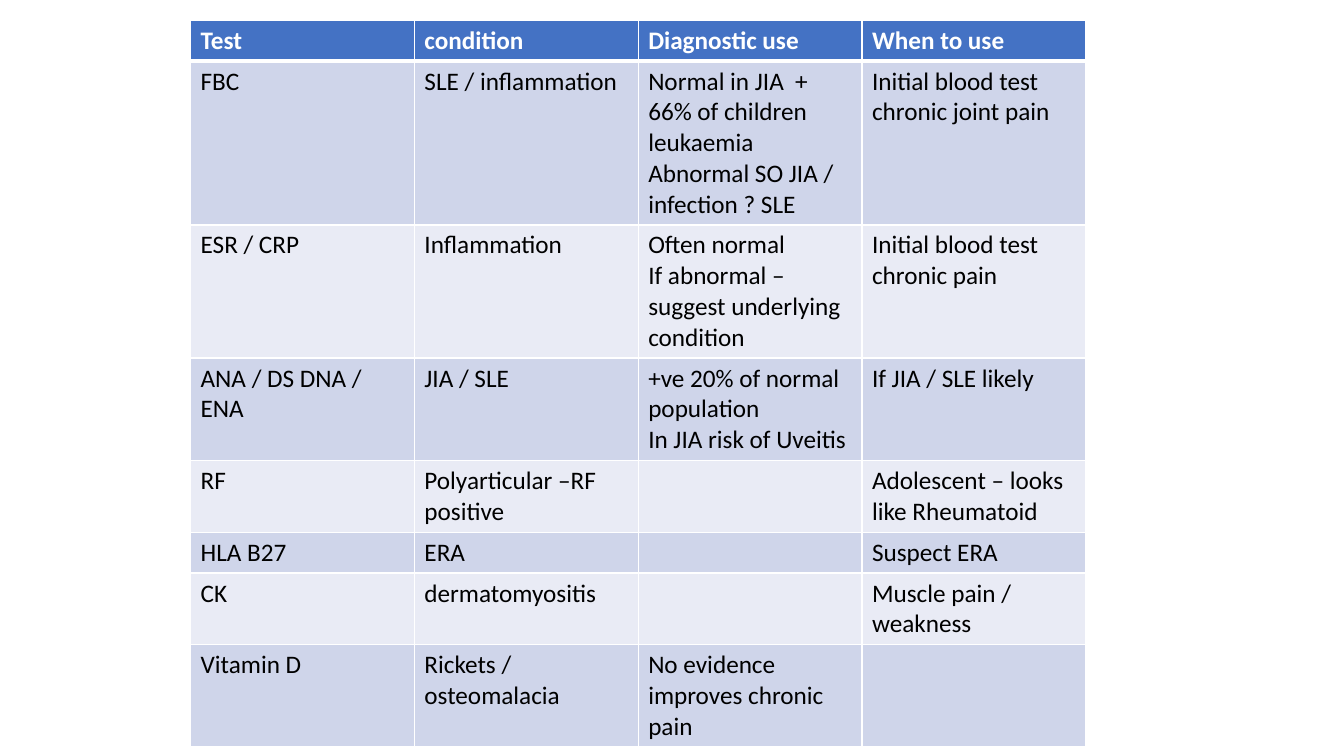
from lxml.etree import SubElement
from pptx import Presentation
from pptx.dml.color import RGBColor
from pptx.oxml.ns import qn
from pptx.util import Inches, Pt

HEADER_FILL, BAND_FILLS = "4472C4", ("CFD5EA", "E9EBF5")
WHITE, BLACK = "FFFFFF", "000000"
COLUMN_WIDTH = 2.22
LINE_HEIGHT, CELL_PADDING = 0.305, 0.1

# Each row: number of text lines in its tallest cell, then the cell texts
ROWS = [
    (1, "Test", "condition", "Diagnostic use", "When to use"),
    (5, "FBC", "SLE / inflammation",
     "Normal in JIA  + 66% of children leukaemia\nAbnormal SO JIA / infection ? SLE",
     "Initial blood test chronic joint pain"),
    (4, "ESR / CRP", "Inflammation",
     "Often normal\nIf abnormal – suggest underlying condition",
     "Initial blood test chronic pain"),
    (3, "ANA / DS DNA / ENA", "JIA / SLE",
     "+ve 20% of normal population\nIn JIA risk of Uveitis", "If JIA / SLE likely"),
    (2, "RF", "Polyarticular –RF positive", "", "Adolescent – looks like Rheumatoid"),
    (1, "HLA B27", "ERA", "", "Suspect ERA"),
    (2, "CK", "dermatomyositis", "", "Muscle pain / weakness"),
    (3, "Vitamin D", "Rickets / osteomalacia", "No evidence improves chronic pain", ""),
]


def write_cell(cell, text, *, size=18, font="Calibri", color=BLACK, bold=False):
    cell.text = text
    for para in cell.text_frame.paragraphs:
        para.font.size = Pt(size)
        for span in para.runs:
            span.font.name = font
            span.font.size = Pt(size)
            span.font.bold = bold
            span.font.color.rgb = RGBColor.from_string(color)


def style_cell(cell, fill, **border_widths):
    # Borders must precede the fill in the cell properties
    properties = cell._tc.get_or_add_tcPr()
    for side, width in border_widths.items():
        line = SubElement(properties, qn(f"a:ln{side}"), w=str(Pt(width)))
        SubElement(SubElement(line, qn("a:solidFill")), qn("a:srgbClr"), val=WHITE)
    cell.fill.solid()
    cell.fill.fore_color.rgb = RGBColor.from_string(fill)


deck = Presentation()
deck.slide_width, deck.slide_height = Inches(13.33), Inches(7.5)
page = deck.slides.add_slide(deck.slide_layouts[6])

# Table of blood tests
heights = [CELL_PADDING + LINE_HEIGHT * row[0] for row in ROWS]
columns = len(ROWS[0]) - 1
table = page.shapes.add_table(
    len(ROWS), columns, Inches(1.89), Inches(0.2),
    Inches(COLUMN_WIDTH * columns), Inches(sum(heights))).table
for column in table.columns:
    column.width = Inches(COLUMN_WIDTH)

# Header row, then alternating bands
for index, (lines, *texts) in enumerate(ROWS):
    table.rows[index].height = Inches(heights[index])
    header = index == 0
    fill = HEADER_FILL if header else BAND_FILLS[(index - 1) % 2]
    for cell, text in zip(table.rows[index].cells, texts):
        write_cell(cell, text, color=WHITE if header else BLACK, bold=header)
        style_cell(cell, fill, L=1, R=1, T=3 if index == 1 else 1, B=3 if header else 1)

deck.save("out.pptx")
